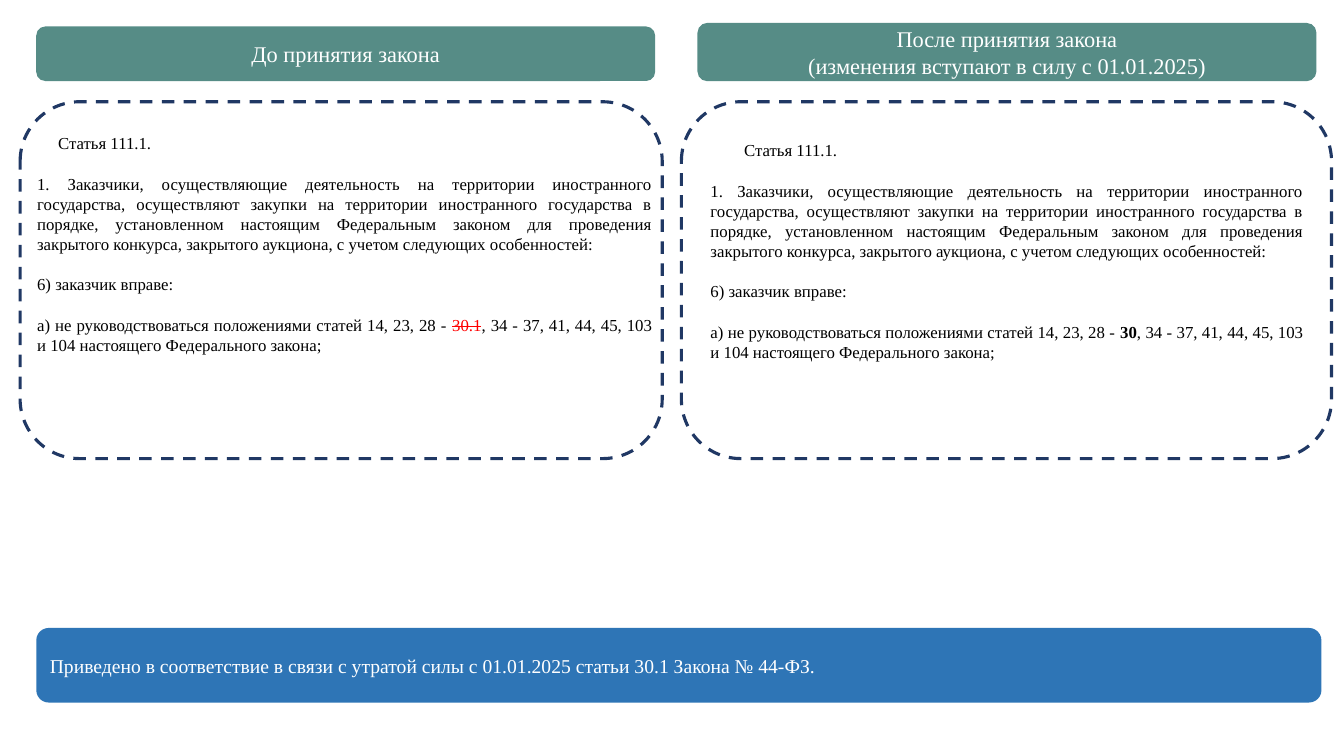
"""Build a slide comparing Article 111.1 before and after the amendment."""
from pptx import Presentation
from pptx.dml.color import RGBColor
from pptx.enum import dml, shapes, text
from pptx.util import Pt

FONT = "Times New Roman"
GREEN, NAVY, BLUE = "568C86", "203864", "2E75B6"
WHITE, BLACK, RED = "FFFFFF", "000000", "FF0000"

ARTICLE = "Статья 111.1."
CUSTOMERS = (
    "1. Заказчики, осуществляющие деятельность на территории иностранного "
    "государства, осуществляют закупки на территории иностранного государства "
    "в порядке, установленном настоящим Федеральным законом для проведения "
    "закрытого конкурса, закрытого аукциона, с учетом следующих особенностей:"
)
RIGHTS = "6) заказчик вправе:"
CLAUSE_START = "а) не руководствоваться положениями статей 14, 23, 28 - "
CLAUSE_END = ", 34 - 37, 41, 44, 45, 103 и 104 настоящего Федерального закона;"

COLUMNS = [
    {
        "heading": ["До принятия закона"],
        "heading_box": (25.92, 18.9, 442.08, 39),
        "panel_box": (14.4, 72.72, 458.64, 254.88),
        "article_box": (19.44, 91.44, 453.6, 283.68),
        "indent": 15,
        "changed": ("30.1", {"color": RED, "strike": True}),
    },
    {
        "heading": ["После принятия закона", "(изменения вступают в силу с 01.01.2025)"],
        "heading_box": (498.24, 16.4, 442.08, 41.6),
        "panel_box": (486.72, 72.72, 464.4, 254.88),
        "article_box": (500.4, 96.48, 437.76, 181.44),
        "indent": 24,
        "changed": ("30", {"bold": True}),
    },
]
REASON = "Приведено в соответствие в связи с утратой силы с 01.01.2025 статьи 30.1 Закона № 44-ФЗ."
REASON_BOX = (25.92, 448.56, 918, 53.28)


def rgb(value):
    return RGBColor.from_string(value)


def write(frame, paragraphs, size, color, align, gap=0, indent=0):
    """Fill a frame; a paragraph is a list of (words, format) runs."""
    frame.word_wrap = True
    for index, runs in enumerate(paragraphs):
        paragraph = frame.paragraphs[0] if index == 0 else frame.add_paragraph()
        paragraph.alignment = align
        if index and gap:
            paragraph.space_before = Pt(gap)
        if not index and indent:
            paragraph._p.get_or_add_pPr().set("indent", str(Pt(indent)))
        for words, style in runs:
            run = paragraph.add_run()
            run.text = words
            run.font.name = FONT
            run.font.size = Pt(size)
            run.font.bold = style.get("bold", False)
            run.font.color.rgb = rgb(style.get("color", color))
            if style.get("strike"):
                run.font._element.set("strike", "sngStrike")


def rounded(slide, box, fill=None, outline=None):
    shape = slide.shapes.add_shape(shapes.MSO_SHAPE.ROUNDED_RECTANGLE, *map(Pt, box))
    shape.shadow.inherit = False
    if fill:
        shape.fill.solid()
        shape.fill.fore_color.rgb = rgb(fill)
    else:
        shape.fill.background()
    if outline:
        shape.line.color.rgb = rgb(outline)
        shape.line.width = Pt(2.25)
        shape.line.dash_style = dml.MSO_LINE.DASH
    else:
        shape.line.fill.background()
    shape.text_frame.vertical_anchor = text.MSO_ANCHOR.MIDDLE
    return shape.text_frame


def main():
    deck = Presentation()
    deck.slide_width, deck.slide_height = Pt(960), Pt(540)
    slide = deck.slides.add_slide(deck.slide_layouts[6])

    for column in COLUMNS:
        heading = rounded(slide, column["heading_box"], fill=GREEN)
        write(heading, [[(line, {})] for line in column["heading"]],
              16, WHITE, text.PP_ALIGN.CENTER)
        rounded(slide, column["panel_box"], outline=NAVY)

        article = slide.shapes.add_textbox(*map(Pt, column["article_box"])).text_frame
        article.auto_size = text.MSO_AUTO_SIZE.SHAPE_TO_FIT_TEXT
        clause = [(CLAUSE_START, {}), column["changed"], (CLAUSE_END, {})]
        plain = [[(words, {})] for words in (ARTICLE, CUSTOMERS, RIGHTS)]
        write(article, plain + [clause], 12, BLACK, text.PP_ALIGN.JUSTIFY,
              gap=14.4, indent=column["indent"])

    reason = rounded(slide, REASON_BOX, fill=BLUE)
    write(reason, [[(REASON, {})]], 14, WHITE, text.PP_ALIGN.JUSTIFY)
    deck.save("out.pptx")


if __name__ == "__main__":
    main()
